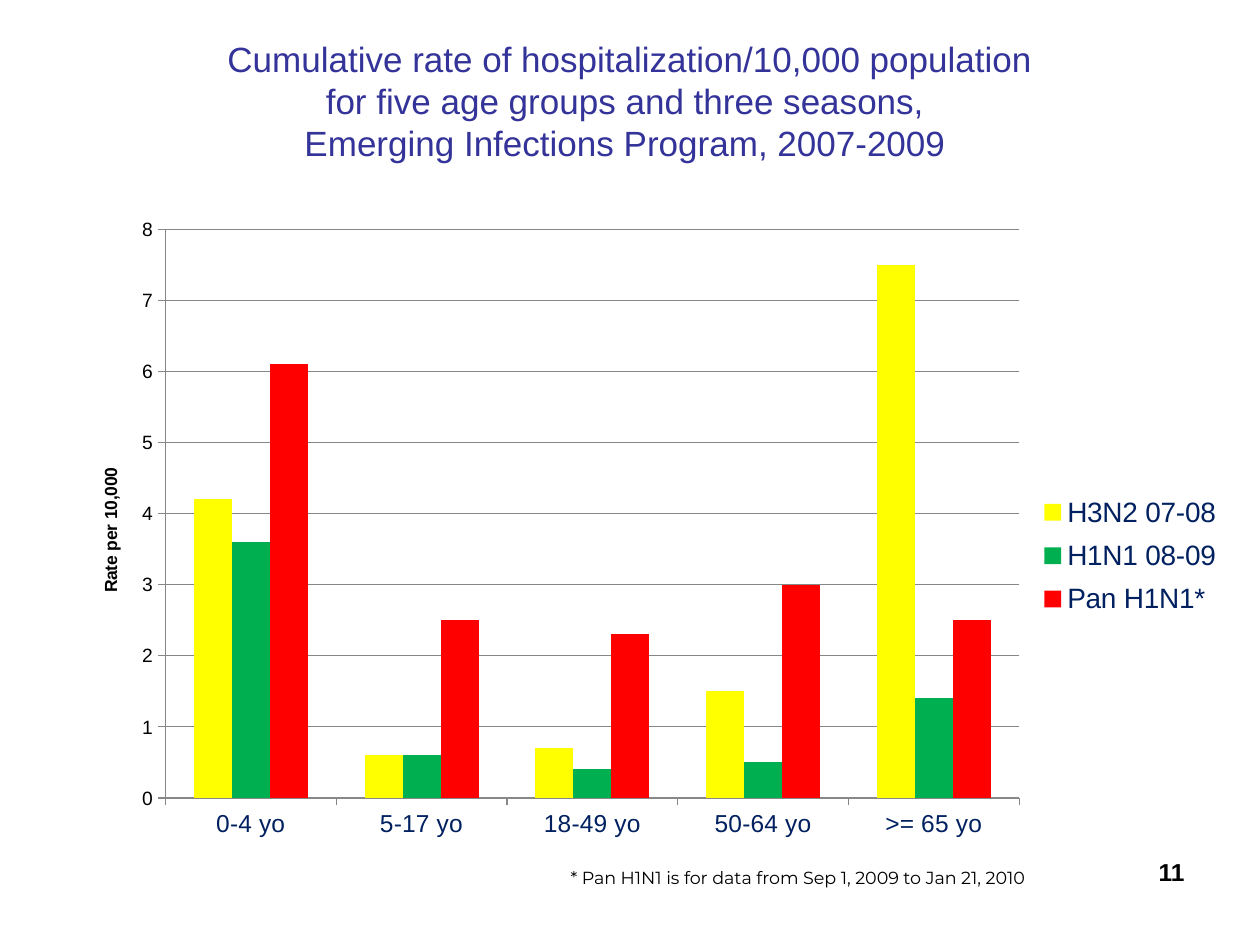
from lxml.etree import SubElement
from pptx import Presentation
from pptx.chart.data import CategoryChartData
from pptx.dml.color import RGBColor
from pptx.enum.chart import XL_CHART_TYPE, XL_LEGEND_POSITION, XL_TICK_MARK
from pptx.enum.text import MSO_ANCHOR, PP_ALIGN
from pptx.oxml.ns import qn
from pptx.util import Inches, Pt

NAVY, GRAY, BLACK = "002060", "878787", "000000"
CATEGORIES = ["0-4 yo", "5-17 yo", "18-49 yo", "50-64 yo", ">= 65 yo"]
SEASONS = [
    ("H3N2 07-08", "FFFF00", [4.2, 0.6, 0.7, 1.5, 7.5]),
    ("H1N1 08-09", "00B050", [3.6, 0.6, 0.4, 0.5, 1.4]),
    ("Pan H1N1*", "FF0000", [6.1, 2.5, 2.3, 3, 2.5]),
]


def color(value):
    return RGBColor.from_string(value)


def set_font(font, size, value, name="Arial", bold=False):
    font.name, font.size, font.bold = name, Pt(size), bold
    font.color.rgb = color(value)


def write(frame, text, align=PP_ALIGN.CENTER, anchor=MSO_ANCHOR.TOP, **font):
    frame.word_wrap = True
    frame.vertical_anchor = anchor
    paragraph = frame.paragraphs[0]
    paragraph.text = text
    paragraph.alignment = align
    for run in paragraph.runs:
        set_font(run.font, **font)


def place(parent, index, **values):
    """Give a chart part a manual layout, as fractions of the chart."""
    for old in parent.findall(qn("c:layout")):
        parent.remove(old)
    layout = SubElement(parent, qn("c:layout"))
    parent.insert(index, layout)
    manual = SubElement(layout, qn("c:manualLayout"))
    for tag, value in values.items():
        SubElement(manual, qn(f"c:{tag}")).set("val", str(value))


class SlideBuilder:
    def __init__(self, presentation):
        self.slide = presentation.slides.add_slide(presentation.slide_layouts[6])

    def text(self, text, left, top, width, height, **style):
        box = self.slide.shapes.add_textbox(
            Inches(left), Inches(top), Inches(width), Inches(height))
        write(box.text_frame, text, **style)

    def column_chart(self, left, top, width, height):
        data = CategoryChartData()
        data.categories = CATEGORIES
        for name, _, values in SEASONS:
            data.add_series(name, values)
        chart = self.slide.shapes.add_chart(
            XL_CHART_TYPE.COLUMN_CLUSTERED, Inches(left), Inches(top),
            Inches(width), Inches(height), data).chart
        chart.has_title = False
        set_font(chart.font, 10, BLACK)

        # Columns
        plot = chart.plots[0]
        plot.vary_by_categories = False
        plot.gap_width, plot.overlap = 150, 0
        for series, (_, fill, _) in zip(plot.series, SEASONS):
            series.format.fill.solid()
            series.format.fill.fore_color.rgb = color(fill)

        # Axes
        rates = chart.value_axis
        rates.minimum_scale, rates.maximum_scale, rates.major_unit = 0, 8, 1
        rates.has_major_gridlines = True
        rates.tick_labels.number_format = "General"
        rates.tick_labels.number_format_is_linked = False
        for axis, size, value in ((chart.category_axis, 14, NAVY), (rates, 11, BLACK)):
            axis.major_tick_mark = XL_TICK_MARK.OUTSIDE
            set_font(axis.tick_labels.font, size, value)
        for item in (chart.category_axis, rates, rates.major_gridlines):
            item.format.line.color.rgb = color(GRAY)
            item.format.line.width = Pt(0.75)
        title = rates.axis_title
        write(title.text_frame, "Rate per 10,000", size=10, value=BLACK, bold=True)
        title.text_frame._txBody.bodyPr.set("rot", "-5400000")

        # Legend
        chart.has_legend = True
        legend = chart.legend
        legend.position = XL_LEGEND_POSITION.RIGHT
        legend.include_in_layout = False
        set_font(legend.font, 16, NAVY)

        # Positions inside the chart
        place(chart._chartSpace.chart.plotArea, 0, layoutTarget="inner",
              xMode="edge", yMode="edge", x=0.08, y=0.029, w=0.739, h=0.873)
        place(title._element, 1, xMode="edge", yMode="edge", x=0.02, y=0.39)
        place(legend._element, 1, xMode="edge", yMode="edge",
              x=0.83, y=0.42, w=0.17, h=0.22)


def main():
    presentation = Presentation()
    presentation.slide_width, presentation.slide_height = Inches(10), Inches(7.5)
    builder = SlideBuilder(presentation)

    # Title
    builder.text("Cumulative rate of hospitalization/10,000 population\n"
                 "for five age groups and three seasons, \n"
                 "Emerging Infections Program, 2007-2009 ",
                 0.75, 0.17, 8.5, 1.25, anchor=MSO_ANCHOR.MIDDLE,
                 size=20, value="333399")

    # Chart
    builder.column_chart(0.58, 1.67, 9.17, 5.17)

    # Footnote and slide number
    builder.text("* Pan H1N1 is for data from Sep 1, 2009 to Jan 21, 2010",
                 3.83, 6.83, 5, 0.27, size=10, value=BLACK, name="Montserrat")
    builder.text("11", 7.17, 6.75, 2.33, 0.52, align=PP_ALIGN.RIGHT,
                 size=14, value=BLACK, bold=True)

    presentation.save("out.pptx")


if __name__ == "__main__":
    main()
